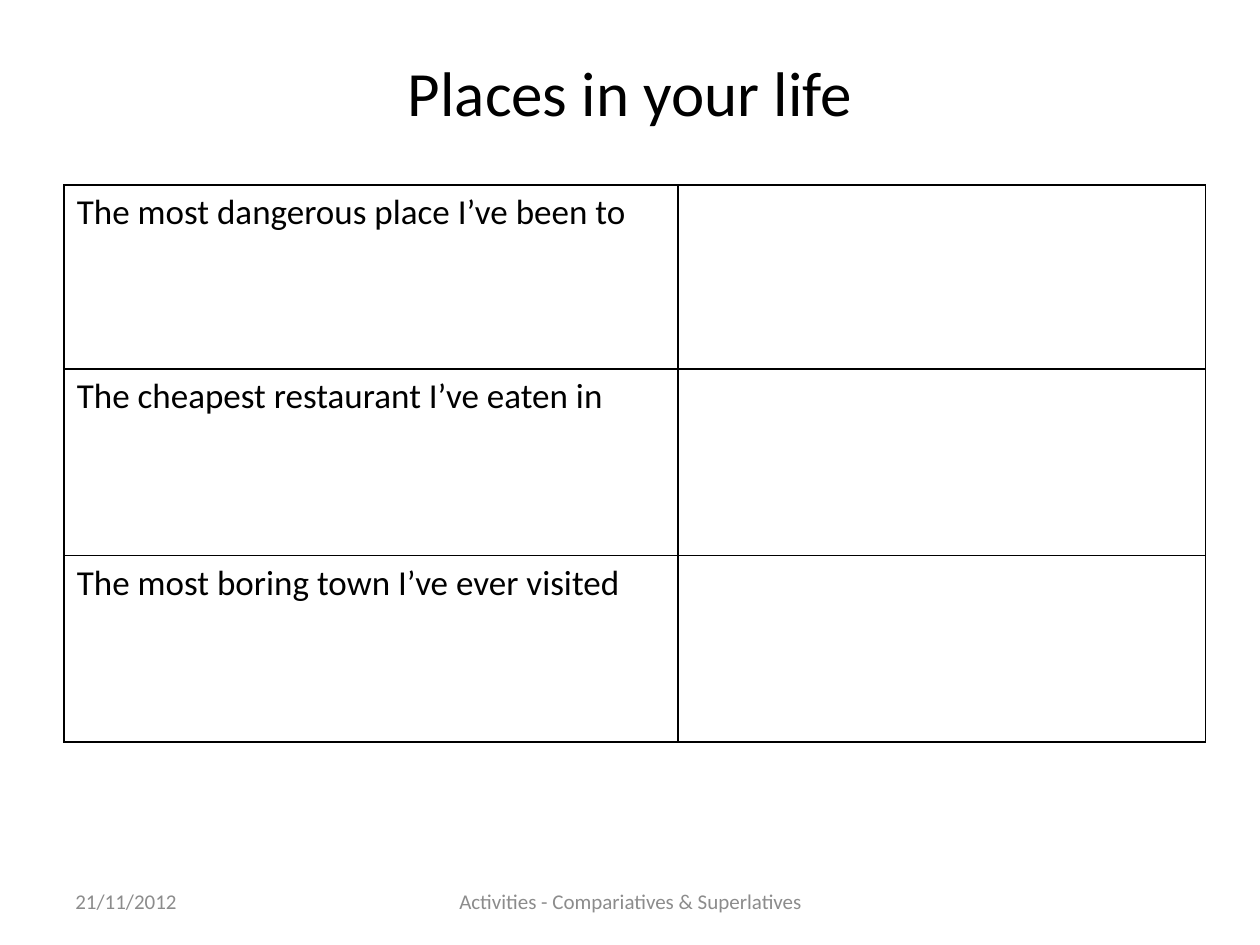
from dataclasses import dataclass

from lxml import etree
from pptx import Presentation
from pptx import util as u
from pptx.dml.color import RGBColor
from pptx.enum import text
from pptx.oxml.ns import qn


@dataclass(frozen=True)
class Theme:
    font: str = "Calibri"
    ink: str = "000000"
    muted: str = "8C8C8C"
    title: int = 36
    body: int = 20
    footer: int = 12
    border: int = 1


@dataclass(frozen=True)
class Label:
    words: str
    left: float
    top: float
    width: float
    height: float
    size: int
    color: str
    align: text.PP_ALIGN = text.PP_ALIGN.CENTER


T = Theme()
LABELS = [
    Label("Places in your life", 0.5, 0.3, 9, 0.85, T.title, T.ink),
    Label("Activities - Compariatives & Superlatives", 3.42, 6.95, 3.17, 0.4,
          T.footer, T.muted),
    Label("21/11/2012", 0.5, 6.95, 2.33, 0.4, T.footer, T.muted, text.PP_ALIGN.LEFT),
]
PROMPTS = [
    "The most dangerous place I’ve been to",
    "The cheapest restaurant I’ve eaten in",
    "The most boring town I’ve ever visited",
]
COLUMNS = [4.87, 4.19]
ROWS = [1.46, 1.48, 1.48]


def write(tf, words: str, *, size: int, color: str = T.ink,
          align: text.PP_ALIGN = text.PP_ALIGN.LEFT) -> None:
    p = tf.paragraphs[0]
    p.alignment = align
    r = p.add_run()
    r.text = words
    r.font.name = T.font
    r.font.size = u.Pt(size)
    r.font.color.rgb = RGBColor.from_string(color)


def draw_label(s, label: Label) -> None:
    box = (label.left, label.top, label.width, label.height)
    tf = s.shapes.add_textbox(*map(u.Inches, box)).text_frame
    tf.word_wrap = True
    tf.vertical_anchor = text.MSO_ANCHOR.MIDDLE
    write(tf, label.words, size=label.size, color=label.color, align=label.align)


def style_cell(cell) -> None:
    tc_pr = cell._tc.get_or_add_tcPr()
    for side in ("a:lnL", "a:lnR", "a:lnT", "a:lnB"):
        ln = etree.SubElement(tc_pr, qn(side), w=str(u.Pt(T.border)))
        fill = etree.SubElement(ln, qn("a:solidFill"))
        etree.SubElement(fill, qn("a:srgbClr"), val=T.ink)
    cell.fill.background()


def draw_table(s, left: float, top: float) -> None:
    box = (left, top, sum(COLUMNS), sum(ROWS))
    table = s.shapes.add_table(len(ROWS), len(COLUMNS), *map(u.Inches, box)).table
    table.first_row = table.horz_banding = False
    for column, width in zip(table.columns, COLUMNS):
        column.width = u.Inches(width)
    for row, height, prompt in zip(table.rows, ROWS, PROMPTS):
        row.height = u.Inches(height)
        for cell in row.cells:
            style_cell(cell)
        write(row.cells[0].text_frame, prompt, size=T.body)


def main() -> None:
    prs = Presentation()
    prs.slide_width, prs.slide_height = u.Inches(10), u.Inches(7.5)
    s = prs.slides.add_slide(prs.slide_layouts[6])
    draw_table(s, 0.51, 1.47)
    for label in LABELS:
        draw_label(s, label)
    prs.save("out.pptx")


if __name__ == "__main__":
    main()
